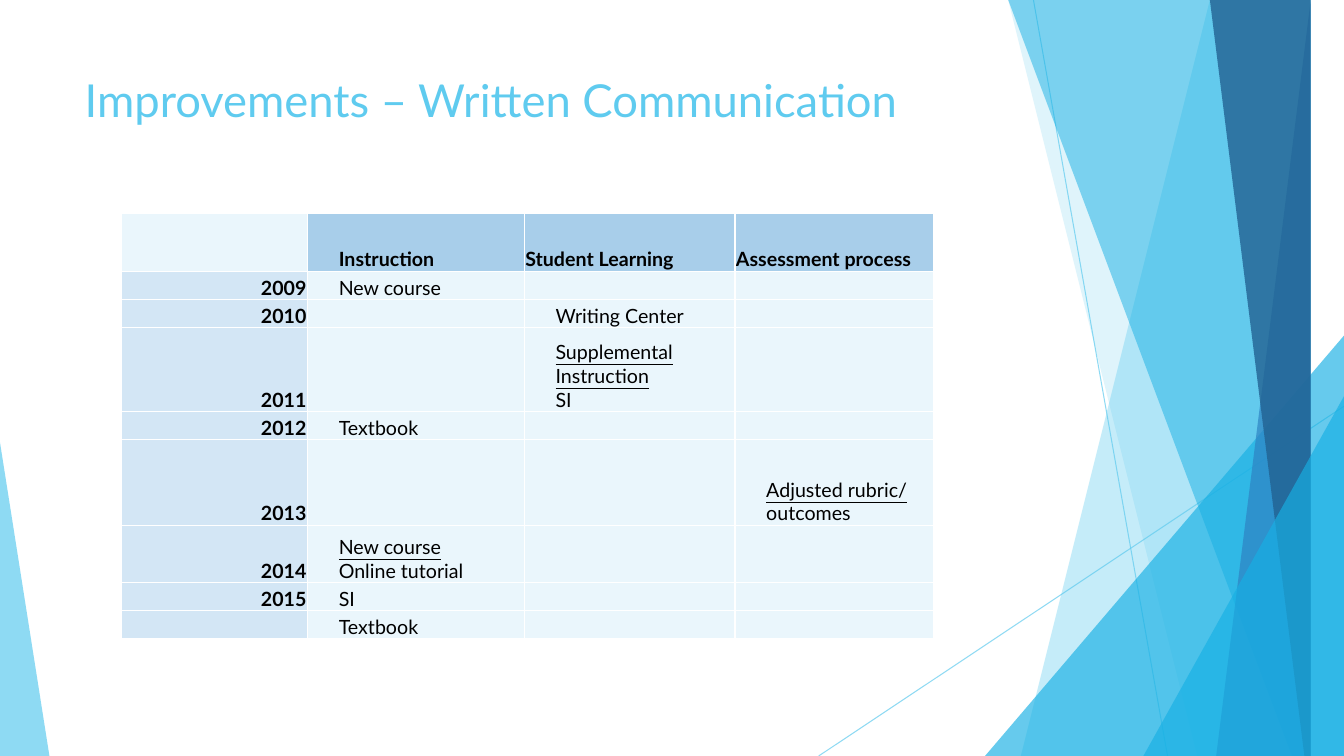
from lxml import etree
from pptx import Presentation
from pptx.dml.color import RGBColor
from pptx.enum.shapes import MSO_CONNECTOR as Connector, MSO_SHAPE as Shape
from pptx.enum.text import MSO_ANCHOR as Anchor, PP_ALIGN as Align
from pptx.oxml import parse_xml
from pptx.oxml.ns import nsdecls, qn
from pptx.util import Inches, Pt

SKY, AZURE, BLUE, NAVY = "5FCBEF", "17B0E4", "2E83C3", "226292"
HEADER, YEAR, BODY = "A8CEEA", "D3E6F5", "EAF6FC"
TOP, BOTTOM, RIGHT = -0.01, 7.5, 13.33

COLUMNS = [1.85, 2.15, 2.09, 1.97]
ROW_HEIGHTS = [0.57, 0.28, 0.28, 0.83, 0.28, 0.85, 0.57, 0.28, 0.28]
HEADINGS = ["", "Instruction", "Student Learning", "Assessment process"]
IMPROVEMENTS = [
    ["2009", "New course", "", ""],
    ["2010", "", "Writing Center", ""],
    ["2011", "", "Supplemental Instruction\nSI", ""],
    ["2012", "Textbook", "", ""],
    ["2013", "", "", "Adjusted rubric/ outcomes"],
    ["2014", "New course\nOnline tutorial", "", ""],
    ["2015", "SI", "", ""],
    ["", "Textbook", "", ""],
]


def color(value):
    return RGBColor.from_string(value)


class SlideBuilder:
    def __init__(self, page, font="Lato"):
        self.page = page
        self.shapes = page.shapes
        self.font = font

    def style_text(self, para, size, tint, bold=False, underline=False):
        para.font.name = self.font
        para.font.size = Pt(size)
        para.font.color.rgb = color(tint)
        para.font.bold = bold
        para.font.underline = underline

    def set_opacity(self, fill, percent):
        """Add an alpha value to the solid colour under a fill's XML parent."""
        tint = next(fill.iter(qn("a:srgbClr")))
        etree.SubElement(tint, qn("a:alpha")).set("val", str(percent * 1000))

    def paint(self, shape, tint, opacity):
        shape.shadow.inherit = False
        shape.line.fill.background()
        shape.fill.solid()
        shape.fill.fore_color.rgb = color(tint)
        self.set_opacity(shape._element.spPr, opacity)

    def line(self, start, end):
        line = self.shapes.add_connector(
            Connector.STRAIGHT, *map(Inches, start + end))
        line.line.color.rgb = color(SKY)
        line.line.width = Pt(0.75)
        properties = line._element.spPr
        self.set_opacity(properties, 70)
        etree.SubElement(properties, qn("a:effectLst"))

    def band(self, top_x, bottom_x, tint, opacity):
        """Fill from a slanted left edge to the right side of the slide."""
        outline = self.shapes.build_freeform(top_x, TOP, scale=Inches(1))
        outline.add_line_segments(
            [(RIGHT, TOP), (RIGHT, BOTTOM), (bottom_x, BOTTOM)], close=True)
        self.paint(outline.convert_to_shape(), tint, opacity)

    def triangle(self, left, top, width, apex, tint, opacity):
        """Draw a triangle that stands on the bottom edge of the slide."""
        shape = self.shapes.add_shape(
            Shape.ISOSCELES_TRIANGLE,
            *map(Inches, (left, top, width, BOTTOM - top)))
        shape.adjustments[0] = apex
        self.paint(shape, tint, opacity)

    def title(self, text):
        box = self.shapes.title
        box.left, box.top, box.width, box.height = map(
            Inches, (0.74, 0.67, 9.4, 0.95))
        frame = box.text_frame
        frame.text = text
        frame.word_wrap = True
        frame.vertical_anchor = Anchor.TOP
        para = frame.paragraphs[0]
        para.alignment = Align.LEFT
        para.line_spacing = 1.0
        self.style_text(para, 32.4, SKY)
        self.shapes._spTree.append(box._element)

    def border(self, cell):
        properties = cell._tc.get_or_add_tcPr()
        for side in ("lnL", "lnR", "lnT", "lnB"):
            properties.append(parse_xml(
                f'<a:{side} {nsdecls("a")} w="12700"><a:solidFill>'
                f'<a:srgbClr val="FFFFFF"/></a:solidFill></a:{side}>'))

    def cell(self, cell, text, fill, bold, align=Align.LEFT, indent=0):
        self.border(cell)
        cell.fill.solid()
        cell.fill.fore_color.rgb = color(fill)
        cell.vertical_anchor = Anchor.BOTTOM
        cell.margin_left = cell.margin_right = cell.margin_top = Inches(0.01)
        cell.margin_bottom = 0
        cell.text = text
        for para in cell.text_frame.paragraphs:
            para.alignment = align
            para._p.get_or_add_pPr().set("marL", str(Inches(indent)))
            self.style_text(para, 14, "000000", bold, underline=not bold)
            if not text:
                end = etree.SubElement(para._p, qn("a:endParaRPr"))
                end.set("sz", "1400")

    def table(self, left, top):
        table = self.shapes.add_table(
            len(ROW_HEIGHTS), len(COLUMNS), Inches(left), Inches(top),
            Inches(sum(COLUMNS)), Inches(sum(ROW_HEIGHTS))).table
        table.first_row = table.horz_banding = False
        for column, width in zip(table.columns, COLUMNS):
            column.width = Inches(width)
        for row, height in zip(table.rows, ROW_HEIGHTS):
            row.height = Inches(height)
        for index, heading in enumerate(HEADINGS):
            self.cell(table.cell(0, index), heading,
                      HEADER if heading else BODY, bold=True,
                      indent=0.3 if index == 1 else 0)
        for row, (year, *items) in enumerate(IMPROVEMENTS, 1):
            self.cell(table.cell(row, 0), year, YEAR, True, Align.RIGHT)
            for column, item in enumerate(items, 1):
                self.cell(table.cell(row, column), item, BODY, False, indent=0.3)


def main():
    deck = Presentation()
    deck.slide_width, deck.slide_height = Inches(RIGHT), Inches(BOTTOM)
    builder = SlideBuilder(deck.slides.add_slide(deck.slide_layouts[5]))

    builder.line((10.25, 0), (11.58, BOTTOM))
    builder.line((RIGHT, 4.03), (8.12, BOTTOM))
    builder.band(12.28, 10.04, SKY, 36)
    builder.band(10.5, 11.83, SKY, 20)
    builder.triangle(9.77, 3.33, 3.56, 1, AZURE, 66)
    builder.band(10.21, 12.91, AZURE, 50)
    builder.band(13.03, 11.92, BLUE, 70)
    builder.band(11.96, 13.18, NAVY, 80)
    builder.triangle(11.34, 3.93, 1.99, 1, AZURE, 66)
    builder.triangle(0, 4.39, 0.49, 0, SKY, 70)

    builder.title("Improvements – Written Communication")
    builder.table(1.2, 2.12)
    deck.save("out.pptx")


if __name__ == "__main__":
    main()
